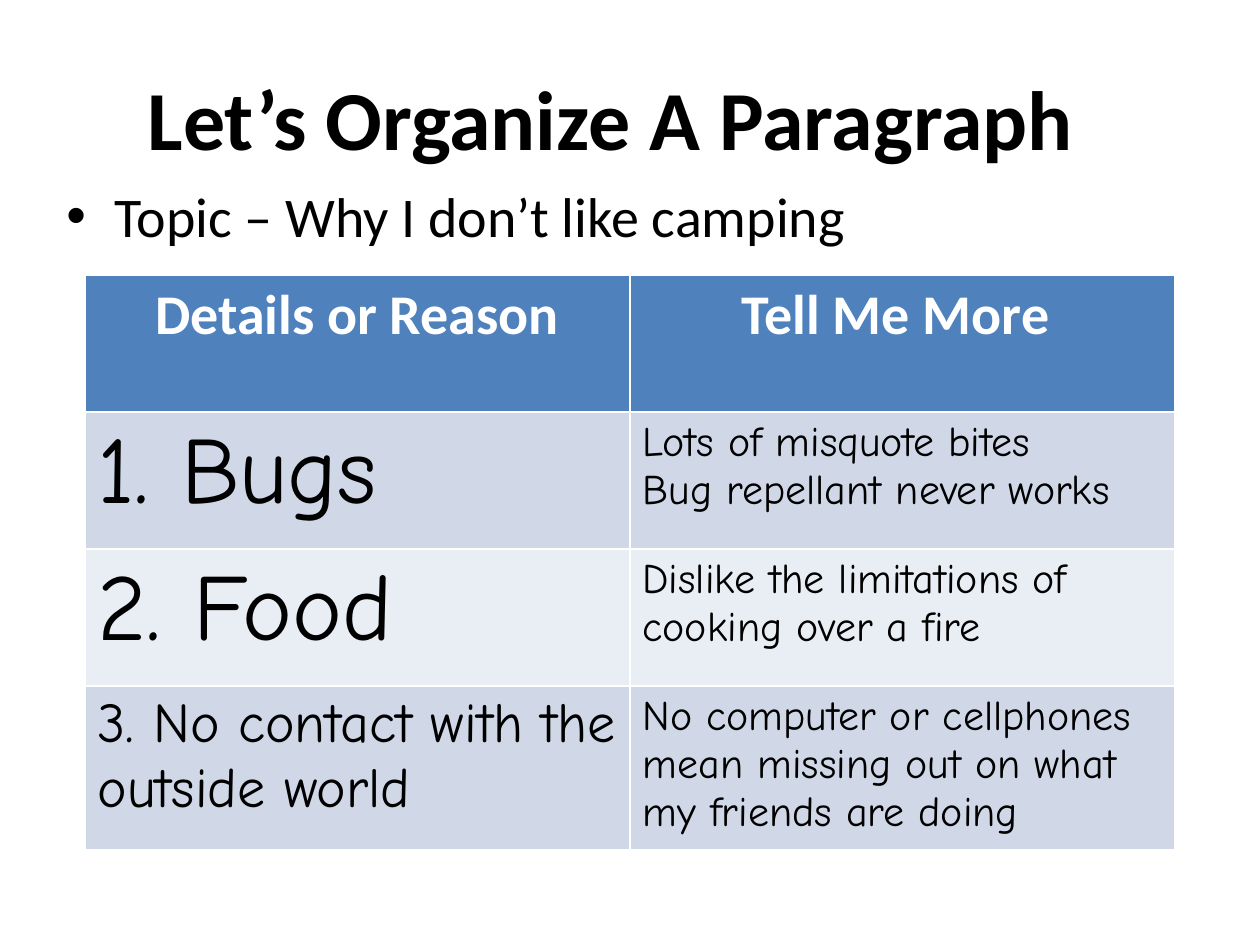
from pptx import Presentation
from pptx.dml.color import RGBColor as Rgb
from pptx.enum.text import MSO_ANCHOR as Anchor, PP_ALIGN as Align
from pptx.oxml.ns import qn
from pptx.util import Pt
from lxml.etree import SubElement as Sub

PX = 914400 / 126
SANS, COMIC = "Calibri", "Comic Neue"
HUES = {"ink": "000000", "white": "FFFFFF", "head": "4F81BD",
        "odd": "D0D8E8", "even": "E9EDF4"}
HEADS = ["Details or Reason", "Tell Me More"]
ROWS = [
    ("1. Bugs", 54, ["Lots of misquote bites", "Bug repellant never works"]),
    ("2. Food", 54, ["Dislike the limitations of cooking over a fire"]),
    ("3. No contact with the outside world", 32,
     ["No computer or cellphones mean missing out on what my friends are doing"]),
]
HIGHS = [137, 137, 137, 153]


def px(num):
    """Turn pixels into EMU."""
    return round(num * PX)


def hue(name):
    """Look up a colour by name."""
    return Rgb.from_string(HUES[name])


def write(frame, lines, size, face=SANS, ink="ink", bold=False, align=Align.LEFT):
    """Fill a text frame with one paragraph per line."""
    frame.text = "\n".join(lines)
    for para in frame.paragraphs:
        para.alignment = align
        font = para.font
        font.name, font.size, font.bold = face, Pt(size), bold
        font.color.rgb = hue(ink)


def add_box(slide, left, top, width, height):
    """Add a wrapping text box and return its frame."""
    box = slide.shapes.add_textbox(px(left), px(top), px(width), px(height))
    box.text_frame.word_wrap = True
    return box.text_frame


def add_title(slide, text):
    """Add the bold title, centred a little left of the middle."""
    frame = add_box(slide, 63, 38, 1134, 158)
    frame.vertical_anchor = Anchor.MIDDLE
    frame.margin_right = px(51)
    write(frame, [text], 48, bold=True, align=Align.CENTER)


def add_topic(slide, text):
    """Add the bulleted topic line."""
    frame = add_box(slide, 54, 175, 1134, 624)
    write(frame, [text], 32)
    para = frame.paragraphs[0]
    para.space_before = Pt(6)
    props = para._p.get_or_add_pPr()
    props.set("marL", str(px(48)))
    props.set("indent", str(px(-48)))
    Sub(props, qn("a:buFont")).set("typeface", "Arial")
    Sub(props, qn("a:buChar")).set("char", "•")


def paint(cell, name):
    """Give a cell a solid fill."""
    cell.fill.solid()
    cell.fill.fore_color.rgb = hue(name)


def add_grid(slide):
    """Add the table of reasons and details."""
    grid = slide.shapes.add_table(len(HIGHS), len(HEADS), px(85), px(275),
                                  px(1090), px(sum(HIGHS))).table
    for row, high in zip(grid.rows, HIGHS):
        row.height = px(high)
    for col, head in enumerate(HEADS):
        cell = grid.cell(0, col)
        paint(cell, "head")
        write(cell.text_frame, [head], 32, ink="white", bold=True, align=Align.CENTER)
    grid.cell(0, 1).margin_right = px(26)
    for num, (reason, size, more) in enumerate(ROWS, 1):
        for col, (lines, pts) in enumerate([([reason], size), (more, 24)]):
            cell = grid.cell(num, col)
            paint(cell, "odd" if num % 2 else "even")
            write(cell.text_frame, lines, pts, COMIC)


def main():
    """Build and save the slide."""
    deck = Presentation()
    deck.slide_width, deck.slide_height = px(1260), px(945)
    slide = deck.slides.add_slide(deck.slide_layouts[6])
    add_title(slide, "Let’s Organize A Paragraph")
    add_topic(slide, "Topic – Why I don’t like camping")
    add_grid(slide)
    deck.save("out.pptx")


if __name__ == "__main__":
    main()
